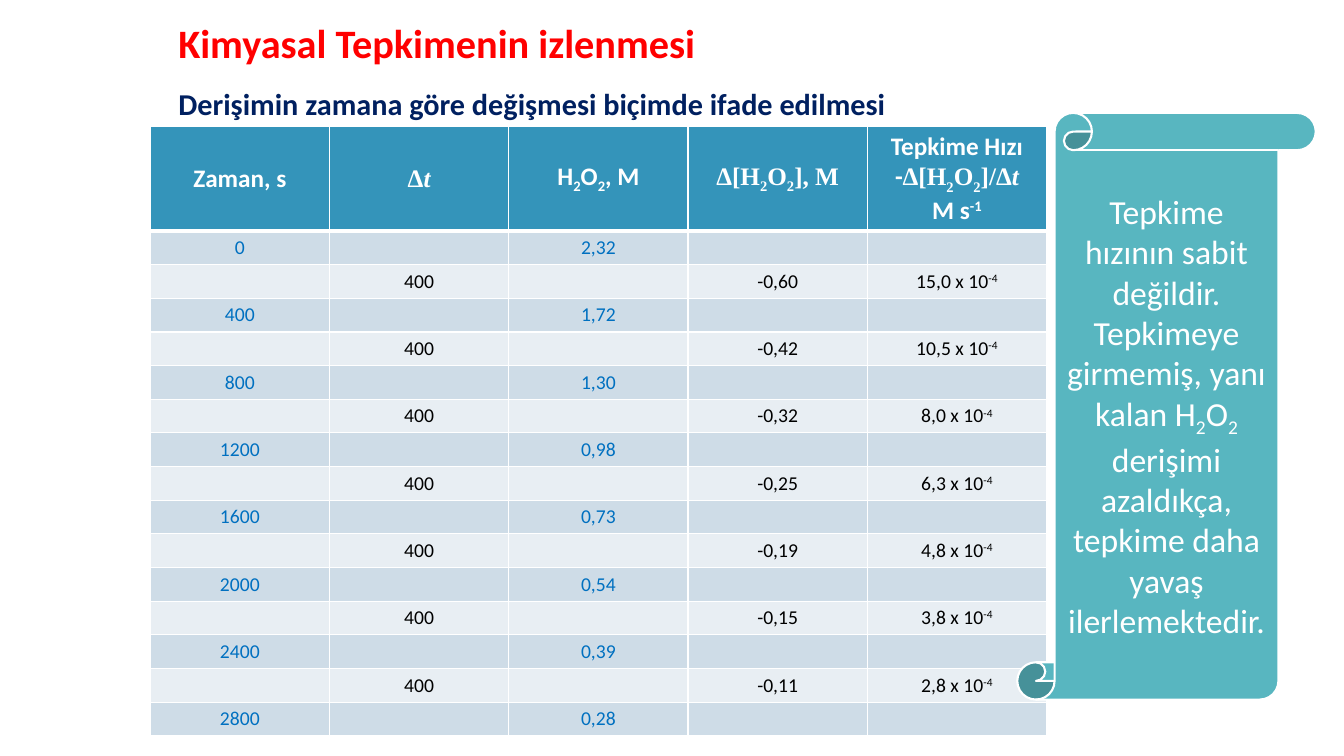
from lxml.etree import SubElement
from pptx import Presentation
from pptx.dml.color import RGBColor
from pptx.enum.shapes import MSO_SHAPE
from pptx.enum.text import MSO_ANCHOR, PP_ALIGN
from pptx.oxml.ns import qn
from pptx.util import Inches, Pt

SUB, SUP = {"base": -25}, {"base": 30}
ROMAN = {"name": "Times New Roman"}
SLANT = ROMAN | {"italic": True}
HEAD = {"size": Pt(18), "bold": True, "color": "FFFFFF"}
BLUE = {"size": Pt(14), "color": "0070C0"}
BLACK = {"size": Pt(14), "color": "000000"}


def rgb(code):
    return RGBColor.from_string(code)


def perox(start, end, **style):
    """Runs for H2O2 with text before and after it."""
    return [(start + "H", style), ("2", SUB | style), ("O", style),
            ("2", SUB | style), (end, style)]


class Deck:
    def __init__(self, font):
        self.font = font
        self.pres = Presentation()
        self.pres.slide_width = Inches(13.33)
        self.pres.slide_height = Inches(7.5)
        self.slide = self.pres.slides.add_slide(self.pres.slide_layouts[6])

    def style(self, run, form):
        form = {"name": self.font} | form
        base, color = form.pop("base", 0), form.pop("color")
        for key, value in form.items():
            setattr(run.font, key, value)
        run.font.color.rgb = rgb(color)
        if base:
            run.font._element.set("baseline", str(base * 1000))

    def text(self, para, runs, form):
        """Add (text, extra format) runs on top of a shared format."""
        for words, extra in runs:
            run = para.add_run()
            run.text = words
            self.style(run, form | extra)

    def title(self, box, lines):
        frame = self.slide.shapes.add_textbox(*map(Inches, box)).text_frame
        frame.word_wrap = True
        frame.vertical_anchor = MSO_ANCHOR.BOTTOM
        para = frame.paragraphs[0]
        para.line_spacing = 1.5
        for index, (words, form) in enumerate(lines):
            if index:
                para.add_line_break()
            self.text(para, [(words, {})], form)

    def border(self, cell, widths):
        props = cell._tc.get_or_add_tcPr()
        for side, width in widths.items():
            line = SubElement(props, qn("a:ln" + side), w=str(Pt(width)))
            fill = SubElement(line, qn("a:solidFill"))
            SubElement(fill, qn("a:srgbClr"), val="FFFFFF")

    def cell(self, cell, paras, form, fill, widths):
        self.border(cell, widths)
        cell.fill.solid()
        cell.fill.fore_color.rgb = rgb(fill)
        cell.vertical_anchor = MSO_ANCHOR.MIDDLE
        frame = cell.text_frame
        for index, runs in enumerate(paras):
            para = frame.add_paragraph() if index else frame.paragraphs[0]
            para.alignment = PP_ALIGN.CENTER
            self.text(para, runs, form)
        if not paras:
            size = str(int(form["size"].pt * 100))
            SubElement(frame.paragraphs[0]._p, qn("a:endParaRPr"), sz=size)

    def table(self, box, head, rows):
        """Draw a header row and then body rows in alternating bands."""
        grid = self.slide.shapes.add_table(
            len(rows) + 1, len(head), *map(Inches, box)).table
        for row in grid.rows:
            row.height = Inches(0.33)
        grid.rows[0].height = Inches(1)
        thin = dict.fromkeys("LRTB", 1)
        for col, paras in enumerate(head):
            self.cell(grid.cell(0, col), paras, HEAD, "3494BA", thin | {"B": 3})
        for index, row in enumerate(rows, 1):
            odd = index % 2
            edges = thin | {"T": 3} if index == 1 else thin
            for col, runs in enumerate(row):
                self.cell(grid.cell(index, col), [runs] if runs else [],
                          BLUE if odd else BLACK,
                          "CEDCE7" if odd else "E8EEF3", edges)

    def scroll(self, box, runs, form):
        shape = self.slide.shapes.add_shape(
            MSO_SHAPE.VERTICAL_SCROLL, *map(Inches, box))
        shape.shadow.inherit = False
        shape.fill.solid()
        shape.fill.fore_color.rgb = rgb("58B6C0")
        shape.line.color.rgb = rgb("FFFFFF")
        shape.line.width = Pt(1.5)
        frame = shape.text_frame
        frame.word_wrap = True
        frame.vertical_anchor = MSO_ANCHOR.MIDDLE
        para = frame.paragraphs[0]
        para.alignment = PP_ALIGN.CENTER
        self.text(para, runs, form)


def main():
    deck = Deck("Calibri")
    deck.title((1.67, 0.17, 8.71, 1.08), [
        ("Kimyasal Tepkimenin izlenmesi",
         {"size": Pt(28.8), "bold": True, "color": "FF0000"}),
        ("Derişimin zamana göre değişmesi biçimde ifade edilmesi",
         {"size": Pt(21.6), "bold": True, "color": "002060"})])

    head = [
        [[("Zaman, s", {})]],
        [[("Δ", ROMAN), ("t", SLANT)]],
        [perox("", ", M")],
        [perox("Δ[", "], M", **ROMAN)],
        [[("Tepkime Hızı", {})],
         [("-", {}), *perox("Δ[", "]/Δ", **ROMAN), ("t", SLANT)],
         [("M s", {}), ("-1", SUP)]],
    ]
    levels = ["2,32", "1,72", "1,30", "0,98", "0,73", "0,54", "0,39", "0,28"]
    drops = ["0,60", "0,42", "0,32", "0,25", "0,19", "0,15", "0,11"]
    rates = ["15,0", "10,5", "8,0", "6,3", "4,8", "3,8", "2,8"]
    step = 400
    rows = []
    for index, level in enumerate(levels):
        rows.append([[(str(index * step), {})], [], [(level, {})], [], []])
        if index < len(drops):
            rows.append([[], [(str(step), {})], [],
                         [("-" + drops[index], {})],
                         [(rates[index] + " x 10", {}), ("-4", SUP)]])
    deck.table((1.49, 1.25, 8.89, 6), head, rows)

    deck.scroll(
        (10.09, 1.12, 2.96, 5.82),
        perox("Tepkime hızının sabit değildir. Tepkimeye girmemiş, yanı kalan ",
              " derişimi azaldıkça, tepkime daha yavaş ilerlemektedir."),
        {"size": Pt(24), "color": "FFFFFF"})
    deck.pres.save("out.pptx")


if __name__ == "__main__":
    main()
